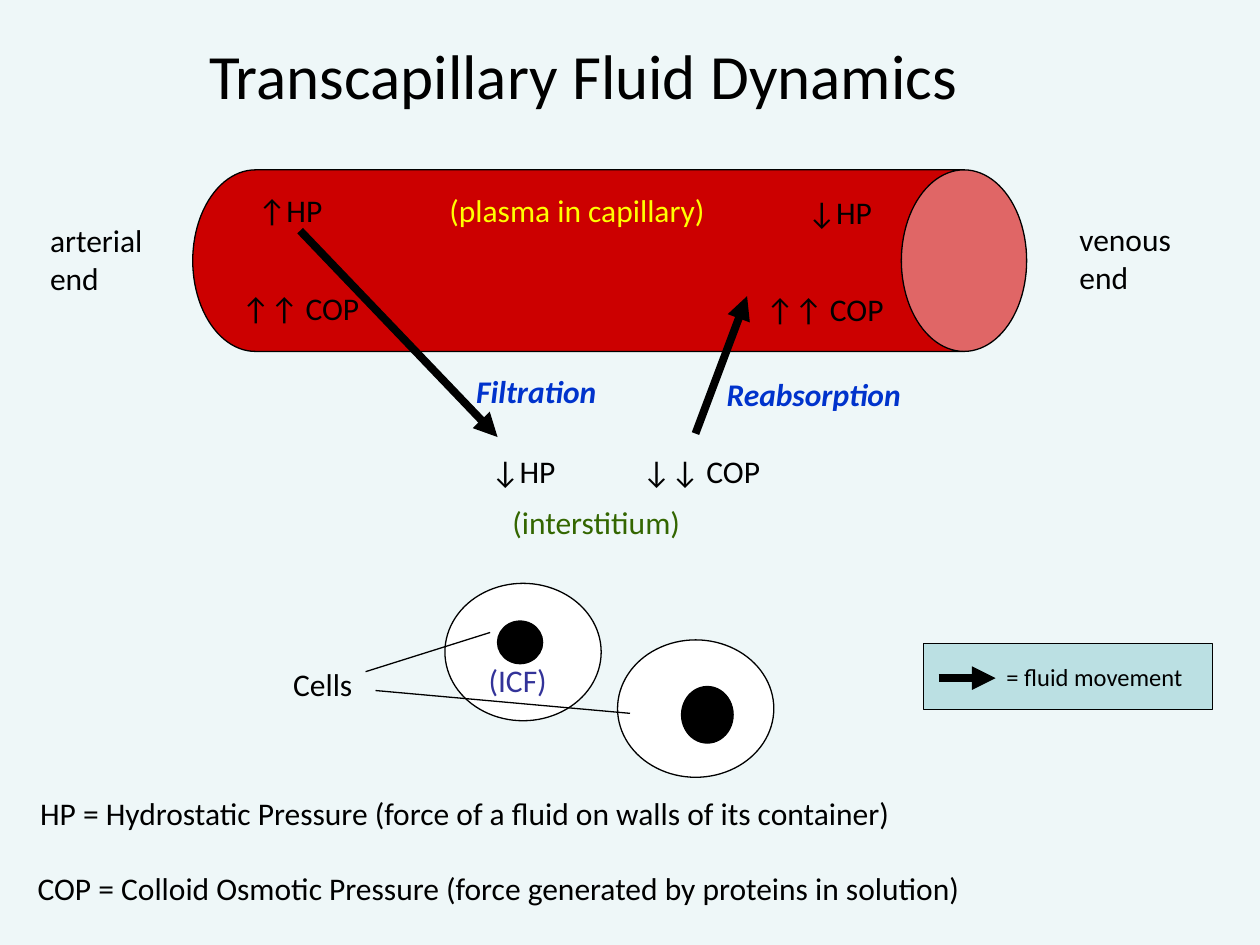
from dataclasses import dataclass

import pptx
import pptx.dml.color
import pptx.enum.shapes
import pptx.enum.text
import pptx.oxml
import pptx.oxml.ns
import pptx.util

Cm = pptx.util.Cm
Pt = pptx.util.Pt
KIND = pptx.enum.shapes.MSO_SHAPE
ANCHOR = pptx.enum.text.MSO_ANCHOR

COLOURS = {
    "ground": "EEF7F8",
    "key": "BBE0E3",
    "blood": "CC0000",
    "black": "000000",
    "white": "FFFFFF",
    "plasma": "FFFF00",
    "tissue": "336600",
    "cell": "333399",
    "flow": "0033CC",
}
THIN, THICK = 0.75, 4.5


@dataclass
class Solid:
    kind: int
    left: float
    top: float
    width: float
    height: float
    fill: str
    turn: float = 0


@dataclass
class Label:
    text: str
    left: float
    top: float
    width: float
    height: float = 1.02
    colour: str = "black"
    size: float = 18
    strong: bool = False
    middle: bool = False


@dataclass
class Line:
    x1: float
    y1: float
    x2: float
    y2: float
    flow: bool = False


def cell(left: float, top: float) -> Solid:
    return Solid(KIND.OVAL, left, top, 3.15, 2.77, "white")


def force(text: str, left: float, top: float) -> Label:
    """Label a pressure with its trend arrows."""
    width = 2.9 if "COP" in text else 1.83
    return Label(text, left, top, width, middle=True)


TITLE = Label("Transcapillary Fluid Dynamics", 3.96, 0.61, 15.72, 1.8, size=36)

SOLIDS = [
    Solid(KIND.RECTANGLE, 18.62, 12.98, 5.82, 1.32, "key"),
    Solid(KIND.CAN, 10.46, -3.15, 3.66, 16.81, "blood", 90),
    cell(8.97, 11.76),
    cell(12.45, 12.9),
    Solid(KIND.OVAL, 13.74, 13.84, 1.04, 1.14, "black"),
    Solid(KIND.OVAL, 10.03, 12.52, 0.91, 0.86, "black"),
]

LABELS = [
    force("↑HP", 4.95, 3.73),
    force("↓HP", 16.03, 3.76),
    force("↑↑ COP", 4.62, 5.69),
    force("↑↑ COP", 15.19, 5.72),
    force("↓HP", 9.65, 8.99),
    force("↓↓ COP", 12.7, 8.99),
    Label("arterial\nend", 0.76, 4.34, 2.46, 1.78),
    Label("venous\nend", 21.51, 4.32, 2.39, 1.78),
    Label("(plasma in capillary)", 8.81, 3.73, 5.72, colour="plasma"),
    Label("Filtration", 9.35, 7.37, 2.97, colour="flow", strong=True),
    Label("Reabsorption", 14.4, 7.44, 4.06, colour="flow", strong=True),
    Label("(interstitium)", 10.08, 10.01, 4.01, colour="tissue"),
    Label("Cells", 5.66, 13.28, 1.73),
    Label("(ICF)", 9.6, 13.21, 1.7, colour="cell"),
    Label("= fluid movement", 20.04, 13.23, 4.09, 0.86, size=14),
    Label("HP = Hydrostatic Pressure (force of a fluid on walls of its container)",
          0.56, 15.88, 17.86),
    Label("COP = Colloid Osmotic Pressure (force generated by proteins in solution)",
          0.51, 17.4, 19.33),
]

LINES = [
    Line(6.05, 4.65, 10.03, 8.81, True),
    Line(14.02, 8.74, 15.06, 5.97, True),
    Line(18.92, 13.67, 20.07, 13.67, True),
    Line(7.37, 13.54, 9.88, 12.75),
    Line(7.57, 13.92, 12.7, 14.38),
]


def paint(fill, name: str) -> None:
    fill.solid()
    fill.fore_color.rgb = pptx.dml.color.RGBColor.from_string(COLOURS[name])


def apply(thing, form: dict) -> None:
    for name, value in form.items():
        setattr(thing, name, value)


def draw_solid(slide, item: Solid) -> None:
    shape = slide.shapes.add_shape(
        item.kind, Cm(item.left), Cm(item.top), Cm(item.width), Cm(item.height))
    shape.rotation = item.turn
    shape.shadow.inherit = False
    if item.kind == KIND.CAN:
        shape.adjustments[0] = 0.69
    paint(shape.fill, item.fill)
    paint(shape.line.fill, "black")
    shape.line.width = Pt(THIN)


def set_label(shape, item: Label) -> None:
    """Place a text shape and format its words."""
    frame = shape.text_frame
    frame.text = item.text
    apply(frame, {
        "word_wrap": False,
        "auto_size": pptx.enum.text.MSO_AUTO_SIZE.SHAPE_TO_FIT_TEXT,
        "vertical_anchor": ANCHOR.MIDDLE if item.middle else ANCHOR.TOP,
    })
    apply(shape, {
        "left": Cm(item.left), "top": Cm(item.top),
        "width": Cm(item.width), "height": Cm(item.height),
    })
    for para in frame.paragraphs:
        para.alignment = pptx.enum.text.PP_ALIGN.LEFT
        for run in para.runs:
            apply(run.font, {
                "name": "Calibri", "size": Pt(item.size),
                "bold": item.strong, "italic": item.strong,
            })
            paint(run.font.fill, item.colour)


def draw_line(slide, item: Line) -> None:
    line = slide.shapes.add_connector(
        pptx.enum.shapes.MSO_CONNECTOR.STRAIGHT,
        Cm(item.x1), Cm(item.y1), Cm(item.x2), Cm(item.y2))
    paint(line.line.fill, "black")
    line.line.width = Pt(THICK if item.flow else THIN)
    qn = pptx.oxml.ns.qn
    props = line.element.find(qn("p:spPr"))
    if item.flow:
        tip = props.find(qn("a:ln")).makeelement(qn("a:tailEnd"), {"type": "triangle"})
        props.find(qn("a:ln")).append(tip)
    props.append(props.makeelement(qn("a:effectLst"), {}))


def main() -> None:
    deck = pptx.Presentation()
    deck.slide_width, deck.slide_height = Cm(25.4), Cm(19.05)
    slide = deck.slides.add_slide(deck.slide_layouts.get_by_name("Title Only"))
    paint(slide.background.fill, "ground")
    set_label(slide.shapes.title, TITLE)
    for solid in SOLIDS:
        draw_solid(slide, solid)
    for label in LABELS:
        box = slide.shapes.add_textbox(0, 0, 0, 0)
        set_label(box, label)
    for line in LINES:
        draw_line(slide, line)
    deck.save("out.pptx")


if __name__ == "__main__":
    main()
